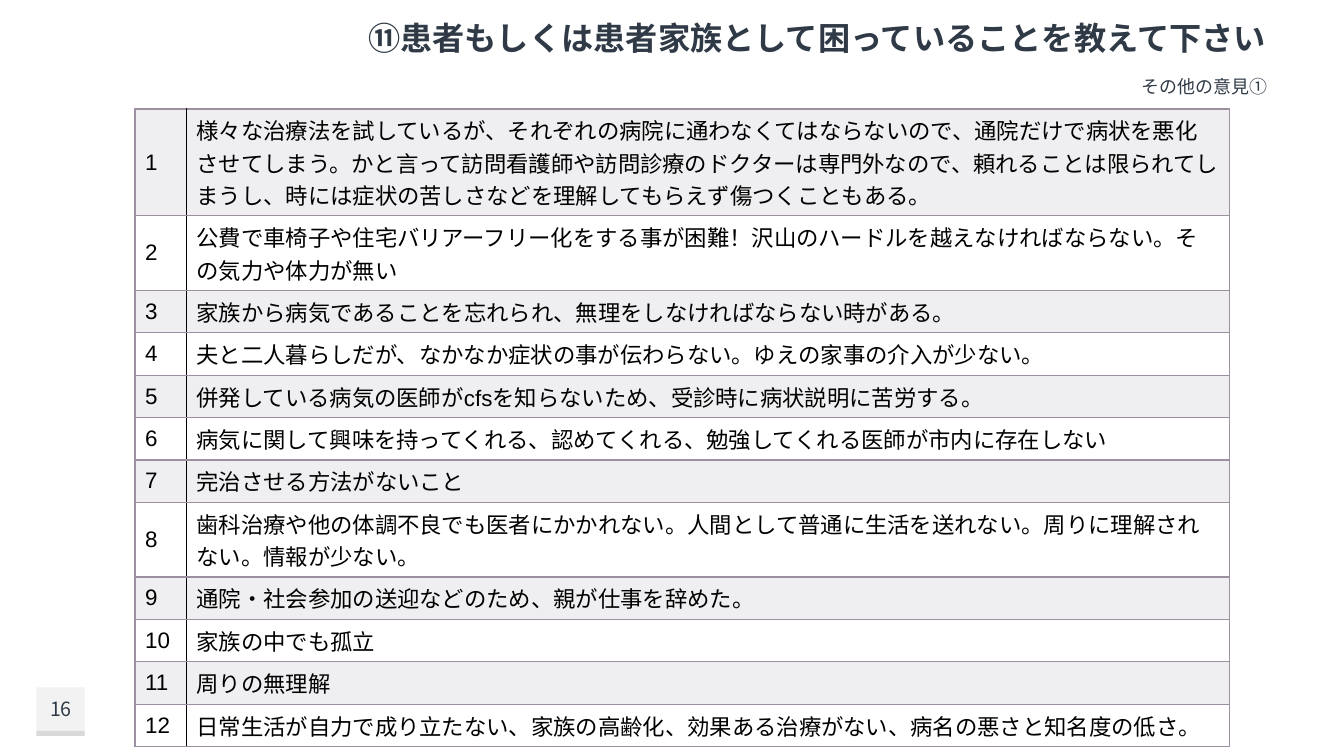
from lxml import etree
from pptx import Presentation
from pptx.dml.color import RGBColor
from pptx.enum.shapes import MSO_SHAPE
from pptx.enum.text import MSO_ANCHOR, MSO_AUTO_SIZE, PP_ALIGN
from pptx.oxml.ns import qn
from pptx.util import Pt

RECTANGLE = MSO_SHAPE.RECTANGLE
MIDDLE = MSO_ANCHOR.MIDDLE
NO_AUTOFIT = MSO_AUTO_SIZE.NONE
LEFT, CENTER, RIGHT = PP_ALIGN.LEFT, PP_ALIGN.CENTER, PP_ALIGN.RIGHT

TITLE = "⑪患者もしくは患者家族として困っていることを教えて下さい"
SUBTITLE = "その他の意見①"
PAGE_NUMBER = "16"
# Each opinion with the number of lines it fills
OPINIONS = [
    ("様々な治療法を試しているが、それぞれの病院に通わなくてはならないので、通院だけで病状を悪化"
     "させてしまう。かと言って訪問看護師や訪問診療のドクターは専門外なので、頼れることは限られてし"
     "まうし、時には症状の苦しさなどを理解してもらえず傷つくこともある。", 3),
    ("公費で車椅子や住宅バリアーフリー化をする事が困難！沢山のハードルを越えなければならない。そ"
     "の気力や体力が無い", 2),
    ("家族から病気であることを忘れられ、無理をしなければならない時がある。", 1),
    ("夫と二人暮らしだが、なかなか症状の事が伝わらない。ゆえの家事の介入が少ない。", 1),
    ("併発している病気の医師がcfsを知らないため、受診時に病状説明に苦労する。", 1),
    ("病気に関して興味を持ってくれる、認めてくれる、勉強してくれる医師が市内に存在しない", 1),
    ("完治させる方法がないこと", 1),
    ("歯科治療や他の体調不良でも医者にかかれない。人間として普通に生活を送れない。周りに理解され"
     "ない。情報が少ない。", 2),
    ("通院・社会参加の送迎などのため、親が仕事を辞めた。", 1),
    ("家族の中でも孤立", 1),
    ("周りの無理解", 1),
    ("日常生活が自力で成り立たない、家族の高齢化、効果ある治療がない、病名の悪さと知名度の低さ。", 1),
]

JAPANESE_FONT = "Noto Sans CJK JP"
TABLE_FONT = "Arial"
INK, BLACK = "2F3A46", "000000"
BORDER = "9D90A0"
BANDS = ("EFEEF0", "FFFFFF")
HEADING_LEFT, HEADING_WIDTH = 157, 755.3
TABLE_LEFT, TABLE_TOP = 96.5, 77.8
COLUMN_WIDTHS = (36.7, 745.2)
LINE_HEIGHT, CELL_PADDING = 23, 7.2


def color(value):
    return RGBColor.from_string(value)


def place(shape, left, top, width, height):
    shape.left, shape.top = Pt(left), Pt(top)
    shape.width, shape.height = Pt(width), Pt(height)


def write(frame, text, size, font, ink, align, bold=False, small_caps=False):
    para = frame.paragraphs[0]
    para.text = text
    para.alignment = align
    para.font.size = Pt(size)
    para.font.name = font
    para.font.bold = bold
    para.font.color.rgb = color(ink)
    properties = para._p.pPr.find(qn("a:defRPr"))
    if small_caps:
        properties.set("cap", "small")
    latin = properties.find(qn("a:latin"))
    east_asian = etree.Element(qn("a:ea"), typeface=JAPANESE_FONT)
    latin.addnext(east_asian)


def prepare(frame):
    """Make a text frame wrap, keep its size and centre its text vertically."""
    frame.word_wrap = True
    frame.auto_size = NO_AUTOFIT
    frame.vertical_anchor = MIDDLE


def add_border(cell, side, value):
    line = etree.SubElement(cell._tc.get_or_add_tcPr(), qn("a:ln" + side), w=str(Pt(1)))
    fill = etree.SubElement(line, qn("a:solidFill"))
    etree.SubElement(fill, qn("a:srgbClr"), val=value)


def add_text_box(page, bounds, text, size, align, small_caps=False):
    box = page.shapes.add_textbox(*map(Pt, bounds))
    prepare(box.text_frame)
    write(box.text_frame, text, size, JAPANESE_FONT, INK, align, small_caps=small_caps)


def add_heading(page):
    title = page.shapes.title
    place(title, HEADING_LEFT, 0, HEADING_WIDTH, 49)
    prepare(title.text_frame)
    write(title.text_frame, TITLE, 28.8, JAPANESE_FONT, INK, RIGHT, bold=True, small_caps=True)
    add_text_box(page, (HEADING_LEFT, 49, HEADING_WIDTH, 22.3), SUBTITLE, 16, RIGHT, small_caps=True)


def add_page_number(page):
    for top, height, fill in ((491, 34.6, "F2F2F2"), (522, 3.6, "D9D9D9")):
        badge = page.shapes.add_shape(RECTANGLE, Pt(25.9), Pt(top), Pt(34.6), Pt(height))
        badge.shadow.inherit = False
        badge.fill.solid()
        badge.fill.fore_color.rgb = color(fill)
        badge.line.fill.background()
    add_text_box(page, (20.9, 491, 45.4, 31), PAGE_NUMBER, 14, CENTER)


def add_opinions(page):
    heights = [LINE_HEIGHT * lines + CELL_PADDING for _, lines in OPINIONS]
    table = page.shapes.add_table(
        len(OPINIONS), len(COLUMN_WIDTHS), Pt(TABLE_LEFT), Pt(TABLE_TOP),
        Pt(sum(COLUMN_WIDTHS)), Pt(sum(heights))).table
    table.first_row = table.horz_banding = False
    for column, width in zip(table.columns, COLUMN_WIDTHS):
        column.width = Pt(width)
    for index, (opinion, _) in enumerate(OPINIONS):
        table.rows[index].height = Pt(heights[index])
        for column, text in enumerate((str(index + 1), opinion)):
            cell = table.cell(index, column)
            write(cell.text_frame, text, 16, TABLE_FONT, BLACK, LEFT)
            if column == 0:
                cell.vertical_anchor = MIDDLE
            divider = "R" if column == 0 else "L"
            for side in "LRTB":
                add_border(cell, side, BLACK if side == divider else BORDER)
            cell.fill.solid()
            cell.fill.fore_color.rgb = color(BANDS[index % 2])


def main():
    deck = Presentation()
    deck.slide_width, deck.slide_height = Pt(960), Pt(540)
    title_only = deck.slide_layouts[5]
    page = deck.slides.add_slide(title_only)
    add_heading(page)
    add_page_number(page)
    add_opinions(page)
    deck.save("out.pptx")


if __name__ == "__main__":
    main()
